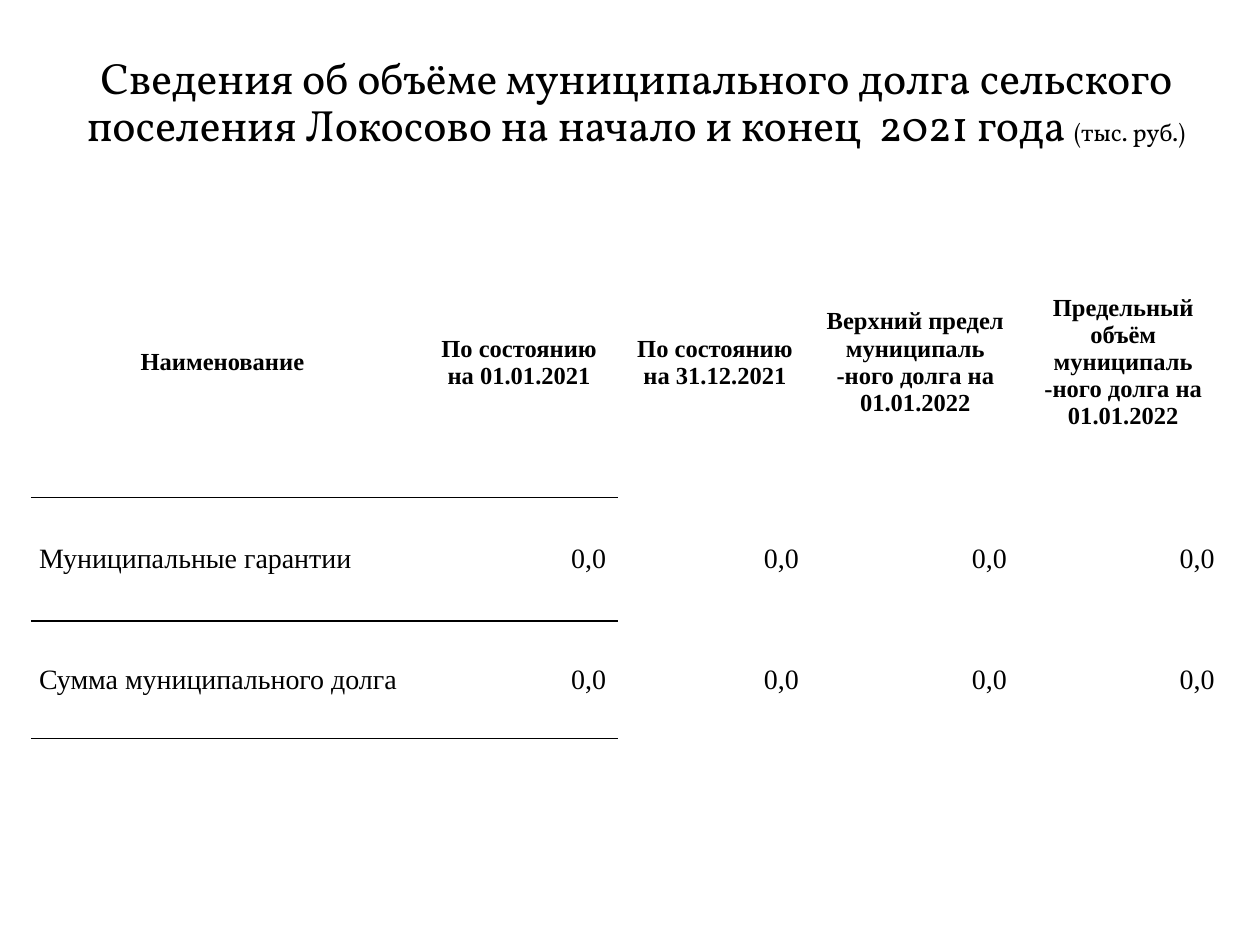
from lxml.etree import SubElement
from pptx import Presentation
from pptx.dml.color import RGBColor
from pptx.enum.text import MSO_ANCHOR as Anchor, MSO_AUTO_SIZE as AutoSize, PP_ALIGN as Align
from pptx.oxml.ns import qn
from pptx.util import Inches, Pt

COLORS = {"ink": "000000", "paper": "FFFFFF"}
TITLE_FONT, TABLE_FONT = "Vollkorn", "Times New Roman"
WIDE_MARGINS, NARROW_MARGINS = (0.1, 0.05), (0.06, 0)

COLUMN_WIDTHS = [3.08, 1.58, 1.53, 1.65, 1.65]
ROW_HEIGHTS = [2.15, 0.98, 0.93]
ROWS = [
    ["Наименование ", "По состоянию на 01.01.2021", "По состоянию на 31.12.2021",
     "Верхний предел муниципаль -ного долга на 01.01.2022",
     "Предельный объём муниципаль -ного долга на 01.01.2022"],
    ["Муниципальные гарантии"] + ["0,0"] * 4,
    ["Сумма муниципального долга"] + ["0,0"] * 4,
]
RULED_COLUMNS = 2  # the columns with black horizontal rules


def set_attributes(target, values):
    for name, value in values.items():
        setattr(target, name, value)


class DebtSlide:
    """Holds the style and the current slide."""

    def __init__(self, presentation):
        self.width, self.height = presentation.slide_width, presentation.slide_height
        self.slide = presentation.slides.add_slide(presentation.slide_layouts[5])

    def box(self, left, top, width, height):
        """Turn shares of the slide's size into a position and a size."""
        return {"left": int(left * self.width), "top": int(top * self.height),
                "width": int(width * self.width), "height": int(height * self.height)}

    def add_text(self, paragraph, text, font, size, bold=False):
        run = paragraph.add_run()
        run.text = text
        set_attributes(run.font, {"name": font, "size": Pt(size), "bold": bold})
        run.font.color.rgb = RGBColor.from_string(COLORS["ink"])

    def title(self, parts, *shares):
        shape = self.slide.shapes.title
        set_attributes(shape, self.box(*shares))
        set_attributes(shape.text_frame, {"word_wrap": True, "auto_size": AutoSize.NONE,
                                          "vertical_anchor": Anchor.MIDDLE})
        paragraph = shape.text_frame.paragraphs[0]
        set_attributes(paragraph, {"alignment": Align.CENTER, "line_spacing": 0.9})
        for text, size in parts:
            self.add_text(paragraph, text, TITLE_FONT, size)

    def border(self, cell, side, color, width):
        properties = cell._tc.get_or_add_tcPr()
        line = SubElement(properties, qn(f"a:ln{side}"), w=str(Pt(width)))
        fill = SubElement(line, qn("a:solidFill"))
        SubElement(fill, qn("a:srgbClr"), val=COLORS[color])

    def cell(self, cell, text, row, column):
        header, ruled = row == 0, column < RULED_COLUMNS
        label = column == 0 and not header
        narrow = label or (header and not ruled)

        # Borders come before the fill in the cell's properties
        top = "ink" if ruled and not header else "paper"
        bottom = "ink" if ruled else "paper"
        below_header = 3 if not ruled and header else 1
        for side, color, width in (("L", "paper", 1), ("R", "paper", 1),
                                   ("T", top, 1), ("B", bottom, below_header)):
            self.border(cell, side, color, width)
        cell.fill.solid()
        cell.fill.fore_color.rgb = RGBColor.from_string(COLORS["paper"])

        across, down = map(Inches, NARROW_MARGINS if narrow else WIDE_MARGINS)
        set_attributes(cell, {"margin_left": across, "margin_right": across,
                              "margin_top": down, "margin_bottom": down,
                              "vertical_anchor": Anchor.MIDDLE})
        paragraph = cell.text_frame.paragraphs[0]
        paragraph.alignment = Align.CENTER if header else Align.LEFT if label else Align.RIGHT
        if not label:
            paragraph.space_before = Pt(3)
        self.add_text(paragraph, text, TABLE_FONT, 14 if header else 16, header)

    def table(self, rows, *shares):
        frame = self.slide.shapes.add_table(len(rows), len(rows[0]), **self.box(*shares))
        table = frame.table
        set_attributes(table, {"first_row": False, "horz_banding": False})
        for column, width in zip(table.columns, COLUMN_WIDTHS):
            column.width = Inches(width)
        for row, height in zip(table.rows, ROW_HEIGHTS):
            row.height = Inches(height)
        for row, texts in enumerate(rows):
            for column, text in enumerate(texts):
                self.cell(table.cell(row, column), text, row, column)


def main():
    presentation = Presentation()
    set_attributes(presentation, {"slide_width": Inches(10), "slide_height": Inches(7.5)})
    debt = DebtSlide(presentation)

    # Heading with the unit in small type
    debt.title([("Сведения об объёме муниципального долга сельского "
                 "поселения Локосово на начало и конец  2021 года ", 25),
                ("(тыс. руб.)", 14)], 0.04, 0.04, 0.93, 0.14)

    # Debt table
    debt.table(ROWS, 0.025, 0.24, 0.95, 0.54)
    presentation.save("out.pptx")


if __name__ == "__main__":
    main()
